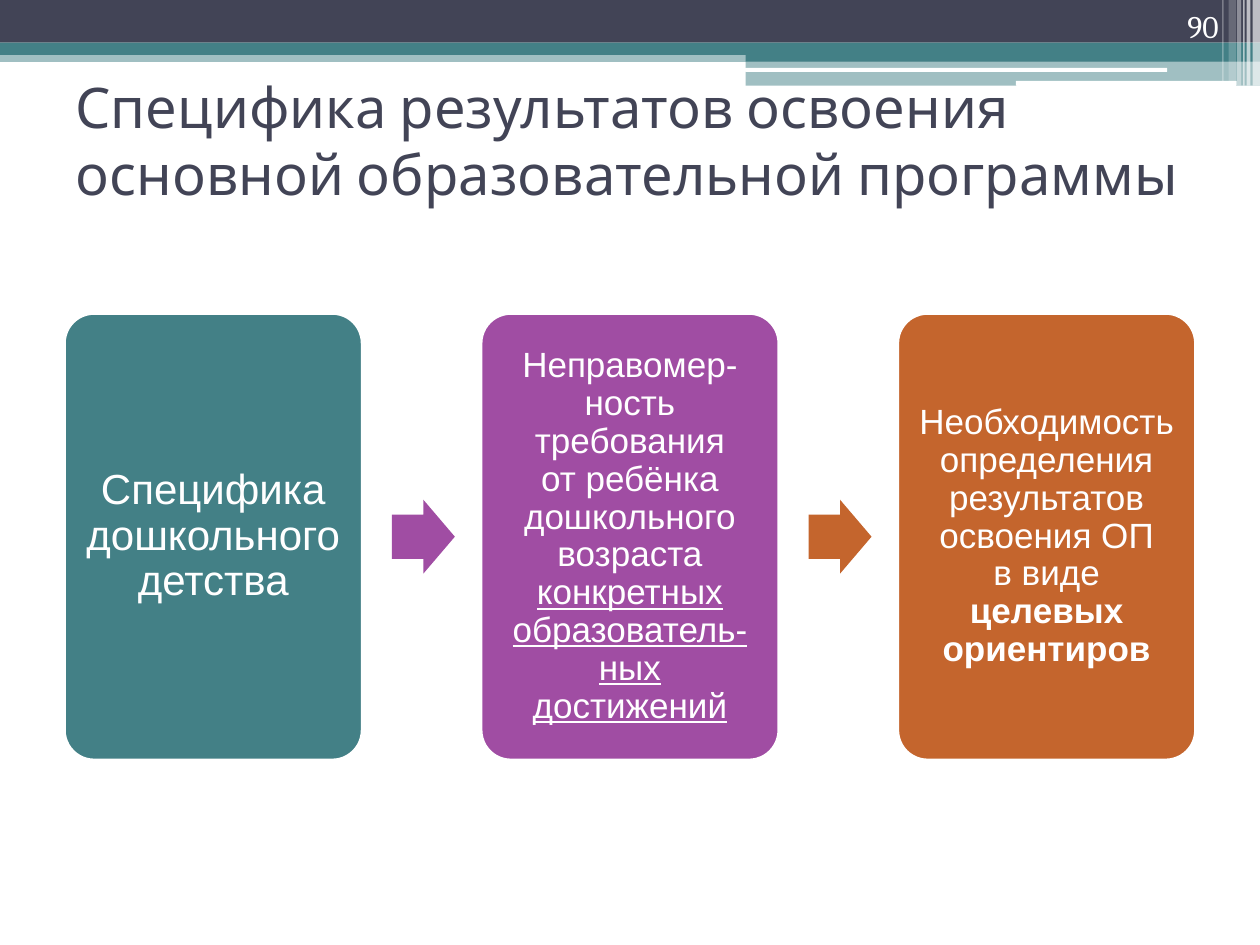
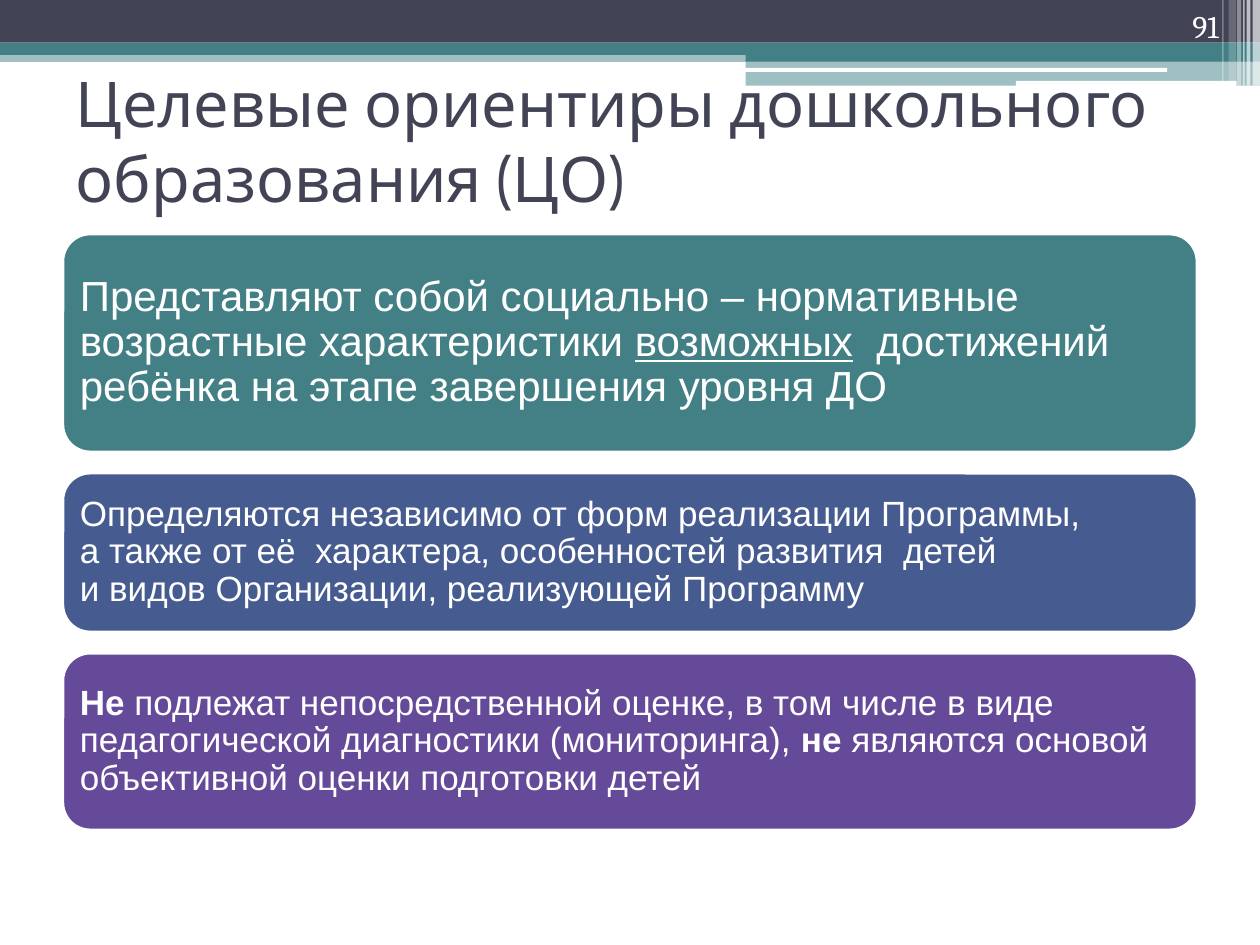
from lxml import etree
from pptx import Presentation
from pptx.dml.color import RGBColor
from pptx.enum.shapes import MSO_SHAPE
from pptx.enum.text import MSO_ANCHOR, MSO_AUTO_SIZE, PP_ALIGN
from pptx.oxml.ns import qn
from pptx.util import Cm, Pt

RECT, ROUNDED = MSO_SHAPE.RECTANGLE, MSO_SHAPE.ROUNDED_RECTANGLE
ARROW = MSO_SHAPE.RIGHT_ARROW
LEFT, CENTER, RIGHT = PP_ALIGN.LEFT, PP_ALIGN.CENTER, PP_ALIGN.RIGHT
MIDDLE, BOTTOM = MSO_ANCHOR.MIDDLE, MSO_ANCHOR.BOTTOM

WHITE = RGBColor(0xFF, 0xFF, 0xFF)
SLATE = RGBColor(0x42, 0x44, 0x56)
TEAL = RGBColor(0x43, 0x80, 0x86)
PURPLE = RGBColor(0xA0, 0x4D, 0xA3)
ORANGE = RGBColor(0xC4, 0x65, 0x2D)
BLUE = RGBColor(0x46, 0x5B, 0x90)
VIOLET = RGBColor(0x65, 0x4A, 0x99)

TITLE_FONT, NUMBER_FONT, BODY_FONT = "Cabin", "Cambria", "Arial"
PLAIN, BOLD, UNDERLINED = "plain", "bold", "underlined"
SLIDE_WIDTH, SLIDE_HEIGHT = 25.4, 19.05

# Lengths in this section are centimetres.
# preset, left, top, width, height, colour, opacity in percent
BANDS = [
    (RECT, 0, 1.02, SLIDE_WIDTH, 0.23, TEAL, 50),
    (RECT, 0, 0, SLIDE_WIDTH, 0.86, SLATE, 100),
    (RECT, 0, 0.86, SLIDE_WIDTH, 0.25, TEAL, 100),
    (RECT, 15.03, 0.99, 10.37, 0.25, TEAL, 100),
    (RECT, 15.03, 1.23, 10.37, 0.5, TEAL, 50),
    (ROUNDED, 15.02, 1.37, 8.51, 0.08, WHITE, 100),
    (ROUNDED, 20.48, 1.63, 4.45, 0.1, WHITE, 100),
]
# left, width, height, opacity of the upright stripes in the corner
STRIPES = [
    (25.25, 0.15, 1.73, 65),
    (25.13, 0.08, 1.73, 65),
    (25.06, 0.03, 1.73, 60),
    (24.94, 0.08, 1.73, 40),
    (24.77, 0.15, 1.63, 20),
    (24.64, 0.03, 1.63, 30),
]

RESULTS_TITLE = "Специфика результатов освоения основной образовательной программы"
# colour, text size, inner margin, runs
STEPS = [
    (TEAL, 24, 0.25, [("Специфика дошкольного детства", PLAIN)]),
    (PURPLE, 20, 0.2, [
        ("Неправомер-ность требования\nот ребёнка дошкольного возраста ", PLAIN),
        ("конкретных образователь-ных достижений", UNDERLINED)]),
    (ORANGE, 20, 0.2, [
        ("Необходимость определения результатов освоения ОП\nв виде\n", PLAIN),
        ("целевых ориентиров", BOLD)]),
]
STEP_LEFT, STEP_TOP, STEP_WIDTH, STEP_HEIGHT, STEP_PITCH = 1.3, 6.32, 6, 9, 8.4
STEP_RADIUS = 0.6
ARROW_WIDTH, ARROW_HEIGHT, ARROW_GAP = 1.27, 1.49, 0.6

TARGETS_TITLE = "Целевые ориентиры дошкольного образования (ЦО)"
# colour, text size, height, runs
TARGETS = [
    (TEAL, 24, 4.39, [
        ("Представляют собой социально – нормативные возрастные характеристики ", PLAIN),
        ("возможных", UNDERLINED),
        ("  достижений ребёнка на этапе завершения уровня ДО", PLAIN)]),
    (BLUE, 20, 3.2, [
        ("Определяются независимо от форм реализации Программы,\n"
         "а также от её  характера, особенностей развития  детей\n"
         "и видов Организации, реализующей Программу", PLAIN)]),
    (VIOLET, 20, 3.56, [
        ("Не", BOLD),
        (" подлежат непосредственной оценке, в том числе в виде "
         "педагогической диагностики (мониторинга), ", PLAIN),
        ("не", BOLD),
        (" являются основой объективной оценки подготовки детей", PLAIN)]),
]
TARGET_LEFT, TARGET_TOP, TARGET_WIDTH, TARGET_GAP = 1.27, 4.72, 22.86, 0.43
TARGET_RADIUS, TARGET_MARGIN = 0.55, 0.18


def add_filled(slide, preset, left, top, width, height, color, opacity=100):
    shape = slide.shapes.add_shape(preset, Cm(left), Cm(top), Cm(width), Cm(height))
    shape.shadow.inherit = False
    shape.fill.solid()
    shape.fill.fore_color.rgb = color
    shape.line.fill.background()
    if opacity < 100:
        fill_color = shape.element.xpath("p:spPr/a:solidFill/a:srgbClr")[0]
        etree.SubElement(fill_color, qn("a:alpha")).set("val", str(opacity * 1000))
    return shape


def write_text(frame, runs, size, font_name, color, align, anchor):
    """Fill the frame's first paragraph; a newline in a run is a line break."""
    frame.word_wrap = True
    frame.auto_size = MSO_AUTO_SIZE.NONE
    frame.vertical_anchor = anchor
    paragraph = frame.paragraphs[0]
    paragraph.alignment = align
    for text, style in runs:
        for index, line in enumerate(text.split("\n")):
            if index:
                paragraph.add_line_break()
            if not line:
                continue
            run = paragraph.add_run()
            run.text = line
            run.font.size = Pt(size)
            run.font.name = font_name
            run.font.color.rgb = color
            run.font.bold = style == BOLD
            run.font.underline = style == UNDERLINED
    return paragraph


def move_bands_to_layout(slide):
    """Draw the shared bands on the slide, then hand them to its layout."""
    stripes = [(RECT, left, 0, width, height, WHITE, opacity)
               for left, width, height, opacity in STRIPES]
    layout_tree = slide.slide_layout.shapes.element
    for index, band in enumerate(BANDS + stripes):
        element = add_filled(slide, *band).element
        element.xpath("p:nvSpPr/p:cNvPr")[0].set("id", str(100 + index))
        layout_tree.insert(2 + index, element)


def add_titled_slide(deck, layout, title_text, title_size, number):
    slide = deck.slides.add_slide(layout)
    title = slide.shapes.title
    title.left, title.top, title.width, title.height = Cm(1.27), Cm(1.32), Cm(22.86), Cm(3)
    write_text(title.text_frame, [(title_text, PLAIN)], title_size,
               TITLE_FONT, SLATE, LEFT, MIDDLE)
    number_box = slide.shapes.add_textbox(Cm(22.71), 0, Cm(2.11), Cm(1.02))
    write_text(number_box.text_frame, [(str(number), PLAIN)], 18,
               NUMBER_FONT, WHITE, RIGHT, BOTTOM)
    return slide


def add_card(slide, left, top, width, height, color, radius, margin, runs, size, align):
    card = add_filled(slide, ROUNDED, left, top, width, height, color)
    card.adjustments[0] = radius / min(width, height)
    card.line.color.rgb = WHITE
    card.line.width = Pt(1.5)
    frame = card.text_frame
    frame.margin_left = frame.margin_right = Cm(margin)
    frame.margin_top = frame.margin_bottom = Cm(margin)
    paragraph = write_text(frame, runs, size, BODY_FONT, WHITE, align, MIDDLE)
    paragraph.line_spacing = 0.9


def add_steps(slide):
    for index, (color, size, margin, runs) in enumerate(STEPS):
        left = STEP_LEFT + index * STEP_PITCH
        if index:
            arrow_left = left - STEP_PITCH + STEP_WIDTH + ARROW_GAP
            arrow_top = STEP_TOP + (STEP_HEIGHT - ARROW_HEIGHT) / 2
            arrow = add_filled(slide, ARROW, arrow_left, arrow_top,
                               ARROW_WIDTH, ARROW_HEIGHT, color)
            arrow.adjustments[0] = 0.6
            arrow.adjustments[1] = 0.5
        add_card(slide, left, STEP_TOP, STEP_WIDTH, STEP_HEIGHT, color,
                 STEP_RADIUS, margin, runs, size, CENTER)


def add_targets(slide):
    top = TARGET_TOP
    for color, size, height, runs in TARGETS:
        add_card(slide, TARGET_LEFT, top, TARGET_WIDTH, height, color,
                 TARGET_RADIUS, TARGET_MARGIN, runs, size, LEFT)
        top += height + TARGET_GAP


def main():
    deck = Presentation()
    deck.slide_width, deck.slide_height = Cm(SLIDE_WIDTH), Cm(SLIDE_HEIGHT)
    title_only = deck.slide_layouts[5]

    results_slide = add_titled_slide(deck, title_only, RESULTS_TITLE, 32, 90)
    move_bands_to_layout(results_slide)
    add_steps(results_slide)

    targets_slide = add_titled_slide(deck, title_only, TARGETS_TITLE, 36, 91)
    add_targets(targets_slide)
    deck.save("out.pptx")


if __name__ == "__main__":
    main()
